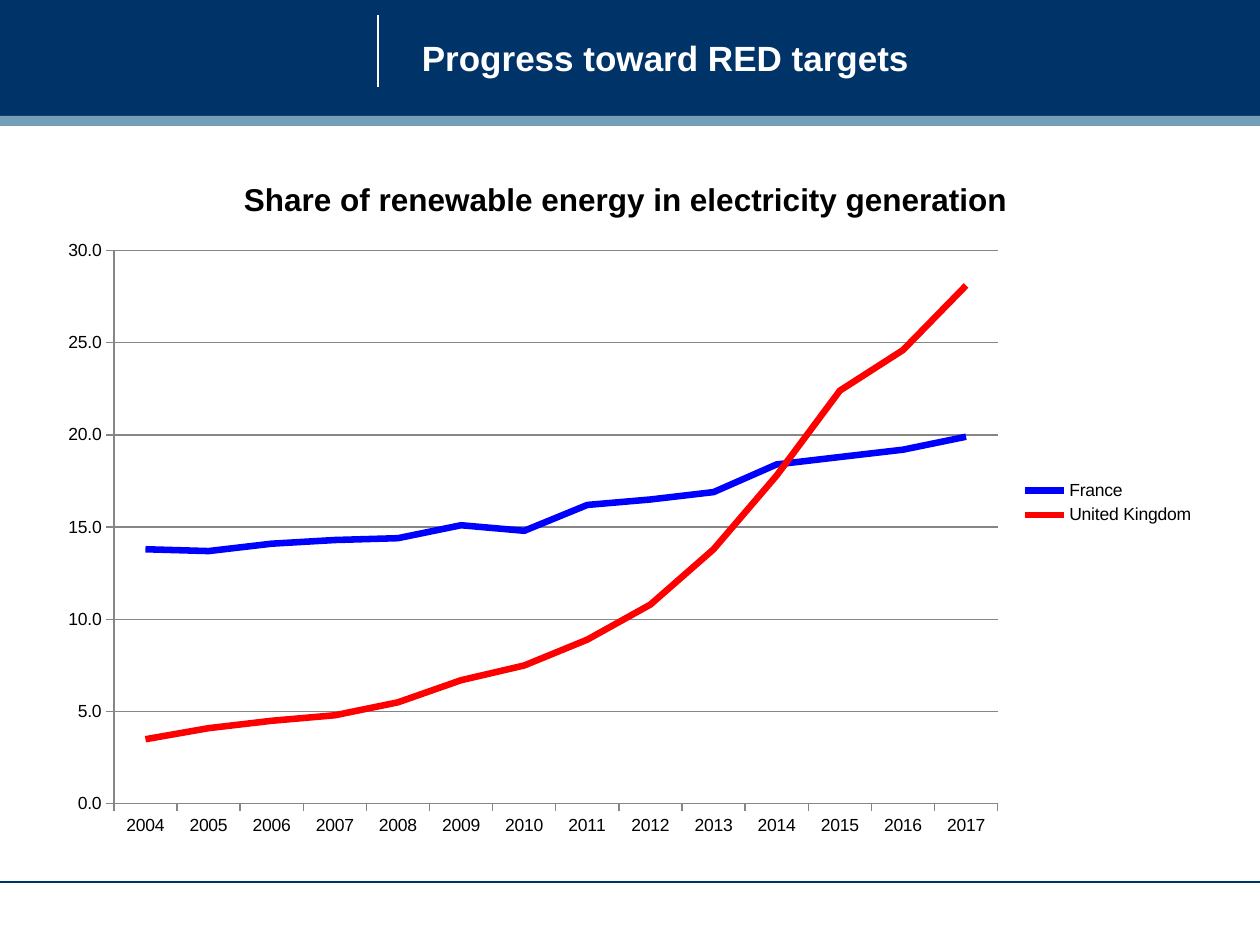
"""Build a slide comparing renewable electricity shares in France and the United Kingdom."""
from dataclasses import dataclass

import lxml.etree
import pptx
import pptx.chart.data
import pptx.dml.color
import pptx.enum.chart
import pptx.enum.shapes
import pptx.enum.text
import pptx.oxml
import pptx.oxml.ns
import pptx.util
from pptx.util import Inches


@dataclass(frozen=True)
class Theme:
    font: str = "Arial"
    navy: str = "003368"
    steel: str = "759FB8"
    white: str = "FFFFFF"
    black: str = "000000"
    grid: str = "868686"
    france: str = "0000FF"
    uk: str = "FF0000"
    heading_size: float = 20
    chart_title_size: float = 18
    label_size: float = 10
    rule_width: float = 0.75
    series_width: float = 3.75


THEME = Theme()
YEARS = [str(year) for year in range(2004, 2018)]
SHARES = {
    "France": (THEME.france, [13.8, 13.7, 14.1, 14.3, 14.4, 15.1, 14.8,
                              16.2, 16.5, 16.9, 18.4, 18.8, 19.2, 19.9]),
    "United Kingdom": (THEME.uk, [3.5, 4.1, 4.5, 4.8, 5.5, 6.7, 7.5,
                                  8.9, 10.8, 13.8, 17.8, 22.4, 24.6, 28.1]),
}


def rgb(color):
    return pptx.dml.color.RGBColor.from_string(color)


def style_font(font, size, color, bold=False):
    font.name = THEME.font
    font.size = pptx.util.Pt(size)
    font.bold = bold
    font.color.rgb = rgb(color)


def style_line(line, color, width=THEME.rule_width):
    line.color.rgb = rgb(color)
    line.width = pptx.util.Pt(width)


def add_band(slide, top, height, color):
    band = slide.shapes.add_shape(
        pptx.enum.shapes.MSO_SHAPE.RECTANGLE,
        0, Inches(top), Inches(10), Inches(height))
    band.shadow.inherit = False
    band.fill.solid()
    band.fill.fore_color.rgb = rgb(color)
    band.line.fill.background()


def add_rule(slide, start, end, color):
    rule = slide.shapes.add_connector(
        pptx.enum.shapes.MSO_CONNECTOR.STRAIGHT,
        *(Inches(length) for length in (*start, *end)))
    style_line(rule.line, color)
    lxml.etree.SubElement(rule._element.spPr, pptx.oxml.ns.qn("a:effectLst"))


def add_heading(slide, wording):
    heading = slide.shapes.add_textbox(
        Inches(3.25), Inches(0.08), Inches(6.33), Inches(0.75))
    frame = heading.text_frame
    frame.word_wrap = True
    frame.vertical_anchor = pptx.enum.text.MSO_ANCHOR.MIDDLE
    frame.margin_left = frame.margin_right = Inches(0.1)
    frame.margin_top = frame.margin_bottom = Inches(0.1)
    frame.text = wording
    style_font(frame.paragraphs[0].runs[0].font,
               THEME.heading_size, THEME.white, bold=True)


def place_plot(chart, left, top, width, height):
    plot_area = chart._chartSpace.chart.plotArea
    for previous in plot_area.findall(pptx.oxml.ns.qn("c:layout")):
        plot_area.remove(previous)
    plot_area.insert(0, pptx.oxml.parse_xml(
        f'<c:layout {pptx.oxml.ns.nsdecls("c")}><c:manualLayout>'
        '<c:layoutTarget val="inner"/><c:xMode val="edge"/><c:yMode val="edge"/>'
        f'<c:x val="{left}"/><c:y val="{top}"/><c:w val="{width}"/><c:h val="{height}"/>'
        '</c:manualLayout></c:layout>'))


def style_axes(chart):
    shares = chart.value_axis
    shares.minimum_scale, shares.maximum_scale, shares.major_unit = 0, 30, 5
    shares.tick_labels.number_format = "#,##0.0"
    shares.tick_labels.number_format_is_linked = False
    shares.has_major_gridlines = True
    style_line(shares.major_gridlines.format.line, THEME.grid)
    for axis in (chart.category_axis, shares):
        axis.major_tick_mark = pptx.enum.chart.XL_TICK_MARK.OUTSIDE
        style_font(axis.tick_labels.font, THEME.label_size, THEME.black)
        style_line(axis.format.line, THEME.grid)


def add_share_chart(slide, title):
    chart_data = pptx.chart.data.CategoryChartData(number_format="#,##0.0")
    chart_data.categories = YEARS
    for country, (_, shares) in SHARES.items():
        chart_data.add_series(country, shares)
    chart = slide.shapes.add_chart(
        pptx.enum.chart.XL_CHART_TYPE.LINE,
        Inches(0.35), Inches(1.21), Inches(9.23), Inches(5.56), chart_data).chart
    style_font(chart.font, THEME.label_size, THEME.black)
    chart.has_title = True
    chart.chart_title.include_in_layout = False
    chart.chart_title.text_frame.text = title
    style_font(chart.chart_title.text_frame.paragraphs[0].runs[0].font,
               THEME.chart_title_size, THEME.black, bold=True)
    chart.has_legend = True
    chart.legend.position = pptx.enum.chart.XL_LEGEND_POSITION.RIGHT
    chart.legend.include_in_layout = False
    style_font(chart.legend.font, THEME.label_size, THEME.black)
    style_axes(chart)
    place_plot(chart, 0.06, 0.14, 0.76, 0.79)
    chart.plots[0].vary_by_categories = False
    for country in chart.plots[0].series:
        country.smooth = False
        country.marker.style = pptx.enum.chart.XL_MARKER_STYLE.NONE
        style_line(country.format.line, SHARES[country.name][0], THEME.series_width)


def main():
    deck = pptx.Presentation()
    deck.slide_width, deck.slide_height = Inches(10), Inches(7.5)
    slide = deck.slides.add_slide(deck.slide_layouts[6])
    add_band(slide, 0, 0.92, THEME.navy)
    add_rule(slide, (3, 0.12), (3, 0.69), THEME.white)
    add_rule(slide, (0, 7), (10, 7), THEME.navy)
    add_band(slide, 0.92, 0.08, THEME.steel)
    add_heading(slide, "Progress toward RED targets")
    add_share_chart(slide, "Share of renewable energy in electricity generation")
    deck.save("out.pptx")


if __name__ == "__main__":
    main()
